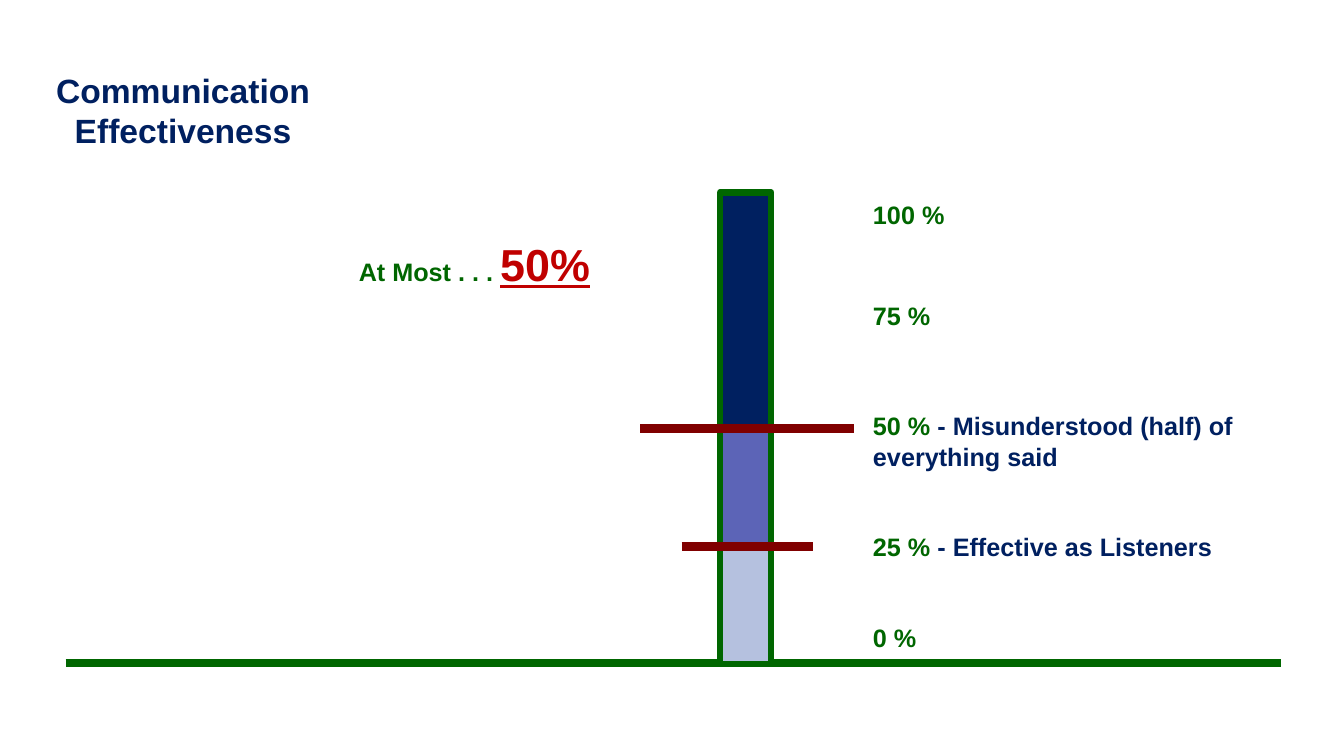
from pptx import Presentation
from pptx.dml.color import RGBColor
from pptx.enum.shapes import MSO_CONNECTOR, MSO_SHAPE
from pptx.enum.text import PP_ALIGN
from pptx.oxml.ns import qn
from pptx.util import Pt
from lxml import etree

PX = 9144  # 100 px to the inch
STRAIGHT, RECT = MSO_CONNECTOR.STRAIGHT, MSO_SHAPE.RECTANGLE
LEFT, CENTER = PP_ALIGN.LEFT, PP_ALIGN.CENTER

NAVY, GREEN, RED, MAROON = "002060", "006600", "C00000", "800000"
VIOLET, PALE = "5C64B7", "B5C1DF"


def px(*lengths):
    return [n * PX for n in lengths]


def rgb(color):
    return RGBColor.from_string(color)


def add_text(s, box, paragraphs, leading, align=LEFT):
    """Each paragraph is (space before in points, [(text, color, format), ...])."""
    tf = s.shapes.add_textbox(*px(*box)).text_frame
    tf.word_wrap = True
    for i, (space, runs) in enumerate(paragraphs):
        p = tf.paragraphs[0] if i == 0 else tf.add_paragraph()
        layout = {"alignment": align, "line_spacing": Pt(leading),
                  "space_before": Pt(space)}
        for name, value in layout.items():
            setattr(p, name, value)
        for text, color, extra in runs:
            r = p.add_run()
            r.text = text
            font = {"name": "Arial", "size": Pt(18), "bold": True, **extra}
            for name, value in font.items():
                setattr(r.font, name, value)
            r.font.color.rgb = rgb(color)


def add_rule(s, x1, x2, y, color):
    """Thick horizontal line."""
    line = s.shapes.add_connector(STRAIGHT, *px(x1, y, x2, y))
    line.line.color.rgb = rgb(color)
    line.line.width = Pt(6)
    etree.SubElement(line._element.spPr, qn("a:effectLst"))


def add_title(s, box):
    large = {"size": Pt(24)}
    add_text(s, box, [(0, [("Communication", NAVY, large)]),
                      (0, [("Effectiveness", NAVY, large)])], 29, CENTER)


def add_gauge(s, box):
    """Stacked bar in quarters, with a rule across each inner boundary."""
    x, y, w, h = box
    quarter = h // 4
    segments = [(2, NAVY, None), (1, VIOLET, 106), (1, PALE, 65)]
    boundaries = []
    for quarters, color, reach in segments:
        height = quarters * quarter
        bar = s.shapes.add_shape(RECT, *px(x, y, w, height))
        bar.shadow.inherit = False
        bar.fill.solid()
        bar.fill.fore_color.rgb = rgb(color)
        bar.line.color.rgb = rgb(GREEN)
        bar.line.width = Pt(4.5)
        if reach:
            boundaries.append((y, reach))
        y += height
    middle = x + w // 2 + 2
    for boundary, reach in boundaries:
        add_rule(s, middle - reach, middle + reach, boundary, MAROON)


def add_scale_labels(s, box):
    levels = [(0, "100 %", ""), (50, "75 %", ""),
              (57, "50 % ", "- Misunderstood (half) of everything said"),
              (42, "25 % ", "- Effective as Listeners"), (43, "0 %", "")]
    paragraphs = []
    for space, level, meaning in levels:
        runs = [(level, GREEN, {})]
        if meaning:
            runs.append((meaning, NAVY, {}))
        paragraphs.append((space, runs))
    add_text(s, box, paragraphs, 22)


def add_callout(s, box):
    emphasis = {"size": Pt(32), "underline": True}
    add_text(s, box, [(0, [("At Most . . . ", GREEN, {}),
                           ("50%", RED, emphasis)])], 40)


def main():
    prs = Presentation()
    prs.slide_width, prs.slide_height = px(1333, 750)
    s = prs.slides.add_slide(prs.slide_layouts[6])
    add_title(s, (44, 64, 275, 106))
    add_rule(s, 65, 1271, 658, GREEN)
    add_gauge(s, (714, 191, 51, 468))
    add_scale_labels(s, (856, 192, 392, 464))
    add_callout(s, (346, 228, 285, 64))
    prs.save("out.pptx")


if __name__ == "__main__":
    main()
